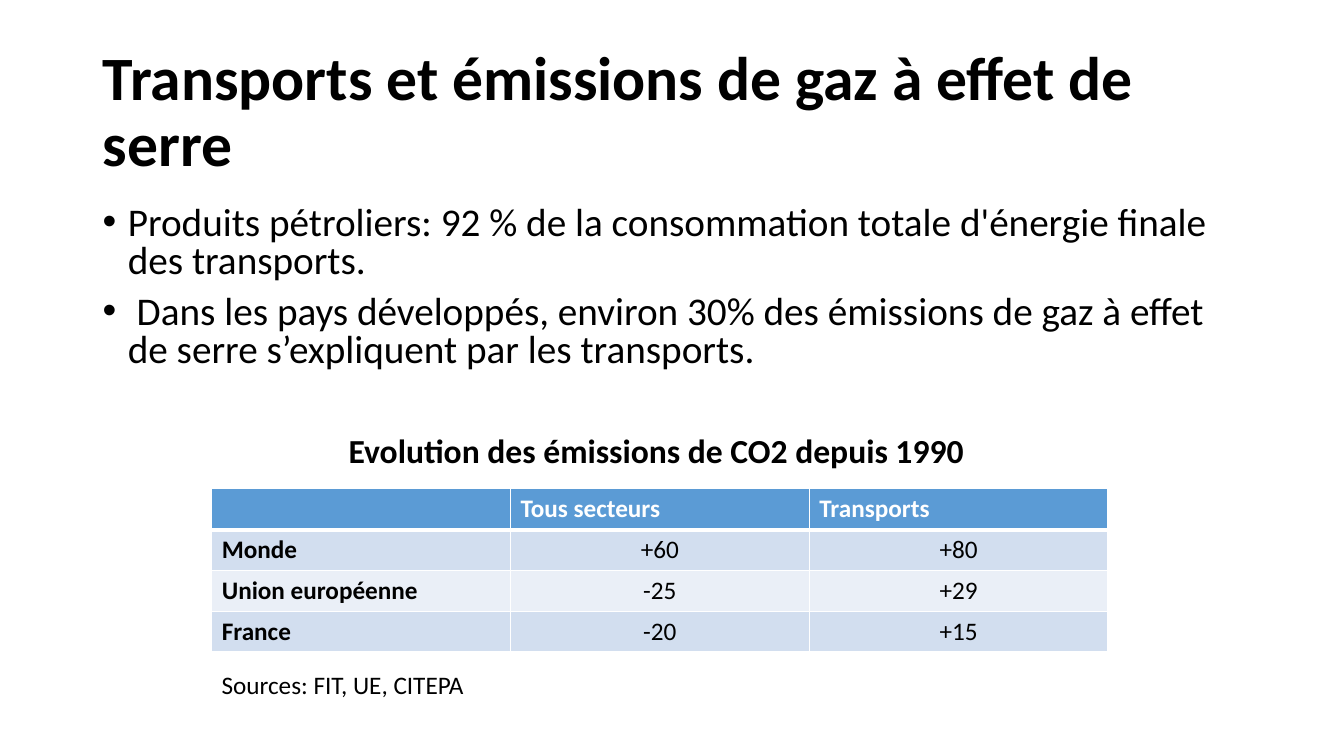
from lxml import etree
from pptx import Presentation
from pptx import util as u
from pptx.dml.color import RGBColor
from pptx.enum import text
from pptx.oxml import ns

BLACK = RGBColor(0x00, 0x00, 0x00)
WHITE = RGBColor(0xFF, 0xFF, 0xFF)
HEADER_BLUE = RGBColor(0x5B, 0x9B, 0xD5)
BAND_DARK = RGBColor(0xD2, 0xDE, 0xEF)
BAND_LIGHT = RGBColor(0xEA, 0xEF, 0xF7)

HEADLINE = "Transports et émissions de gaz à effet de serre"
POINTS = [
    "Produits pétroliers: 92 % de la consommation totale d'énergie finale des transports.",
    " Dans les pays développés, environ 30% des émissions de gaz à effet de serre "
    "s’expliquent par les transports.",
]
EMISSIONS = [
    ["", "Tous secteurs", "Transports"],
    ["Monde", "+60", "+80"],
    ["Union européenne", "-25", "+29"],
    ["France", "-20", "+15"],
]


class SlideBuilder:
    """Holds the slide and its style, and adds one kind of element per method."""

    font = "Calibri"

    def __init__(self, slide):
        self.slide = slide

    def add_run(self, paragraph, words, size, bold=False, color=BLACK):
        run = paragraph.add_run()
        run.text = words
        run.font.name = self.font
        run.font.size = u.Pt(size)
        run.font.bold = bold
        run.font.color.rgb = color

    def title(self, words, left, top, width, height):
        headline = self.slide.shapes.title
        headline.left, headline.top = u.Inches(left), u.Inches(top)
        headline.width, headline.height = u.Inches(width), u.Inches(height)
        frame = headline.text_frame
        frame.word_wrap = True
        frame.auto_size = text.MSO_AUTO_SIZE.NONE
        frame.vertical_anchor = text.MSO_ANCHOR.MIDDLE
        paragraph = frame.paragraphs[0]
        paragraph.alignment = text.PP_ALIGN.LEFT
        paragraph.line_spacing = 0.9
        self.add_run(paragraph, words, 44, bold=True)

    def text_box(self, left, top, width, height):
        box = self.slide.shapes.add_textbox(
            u.Inches(left), u.Inches(top), u.Inches(width), u.Inches(height))
        return box.text_frame

    def bullets(self, points, left, top, width, height):
        frame = self.text_box(left, top, width, height)
        frame.word_wrap = True
        for i, point in enumerate(points):
            paragraph = frame.add_paragraph() if i else frame.paragraphs[0]
            paragraph.line_spacing = 0.8
            paragraph.space_before = u.Pt(10)
            properties = paragraph._p.get_or_add_pPr()
            properties.set("marL", str(u.Inches(0.25)))
            properties.set("indent", str(-u.Inches(0.25)))
            bullet_font = etree.SubElement(properties, ns.qn("a:buFont"))
            bullet_font.set("typeface", "Arial")
            etree.SubElement(properties, ns.qn("a:buChar")).set("char", "•")
            self.add_run(paragraph, point, 28)

    def label(self, words, left, top, width, height, size, bold=False):
        frame = self.text_box(left, top, width, height)
        frame.word_wrap = False
        frame.auto_size = text.MSO_AUTO_SIZE.SHAPE_TO_FIT_TEXT
        self.add_run(frame.paragraphs[0], words, size, bold)

    def cell_borders(self, cell, widths):
        properties = cell._tc.get_or_add_tcPr()
        for i, (side, width) in enumerate(widths.items()):
            line = etree.Element(ns.qn(f"a:ln{side}"), w=str(u.Pt(width)))
            fill = etree.SubElement(line, ns.qn("a:solidFill"))
            etree.SubElement(fill, ns.qn("a:srgbClr")).set("val", str(WHITE))
            properties.insert(i, line)

    def table(self, rows, left, top, width, height):
        grid = self.slide.shapes.add_table(
            len(rows), len(rows[0]), u.Inches(left), u.Inches(top),
            u.Inches(width), u.Inches(height)).table
        for r, row in enumerate(rows):
            header = r == 0
            band = HEADER_BLUE if header else BAND_DARK if r % 2 else BAND_LIGHT
            for c, words in enumerate(row):
                cell = grid.cell(r, c)
                cell.fill.solid()
                cell.fill.fore_color.rgb = band
                self.cell_borders(cell, {"L": 1, "R": 1, "T": 3 if r == 1 else 1,
                                         "B": 3 if header else 1})
                paragraph = cell.text_frame.paragraphs[0]
                if not header and c > 0:
                    paragraph.alignment = text.PP_ALIGN.CENTER
                if words:
                    self.add_run(paragraph, words, 18, bold=header or c == 0,
                                 color=WHITE if header else BLACK)


def main():
    deck = Presentation()
    deck.slide_width, deck.slide_height = u.Inches(13.33), u.Inches(7.5)
    builder = SlideBuilder(deck.slides.add_slide(deck.slide_layouts[5]))

    # Headline and key points
    builder.title(HEADLINE, 0.92, 0.4, 11.5, 1.45)
    builder.bullets(POINTS, 0.92, 2, 11.5, 1.9)

    # Emissions table with its caption and sources
    builder.table(EMISSIONS, 2.1, 4.85, 8.89, 1.62)
    builder.label("Evolution des émissions de CO2 depuis 1990",
                  3.36, 4.22, 6.37, 0.5, size=24, bold=True)
    builder.label("Sources: FIT, UE, CITEPA", 2.1, 6.59, 2.63, 0.4, size=18)

    deck.save("out.pptx")


if __name__ == "__main__":
    main()
